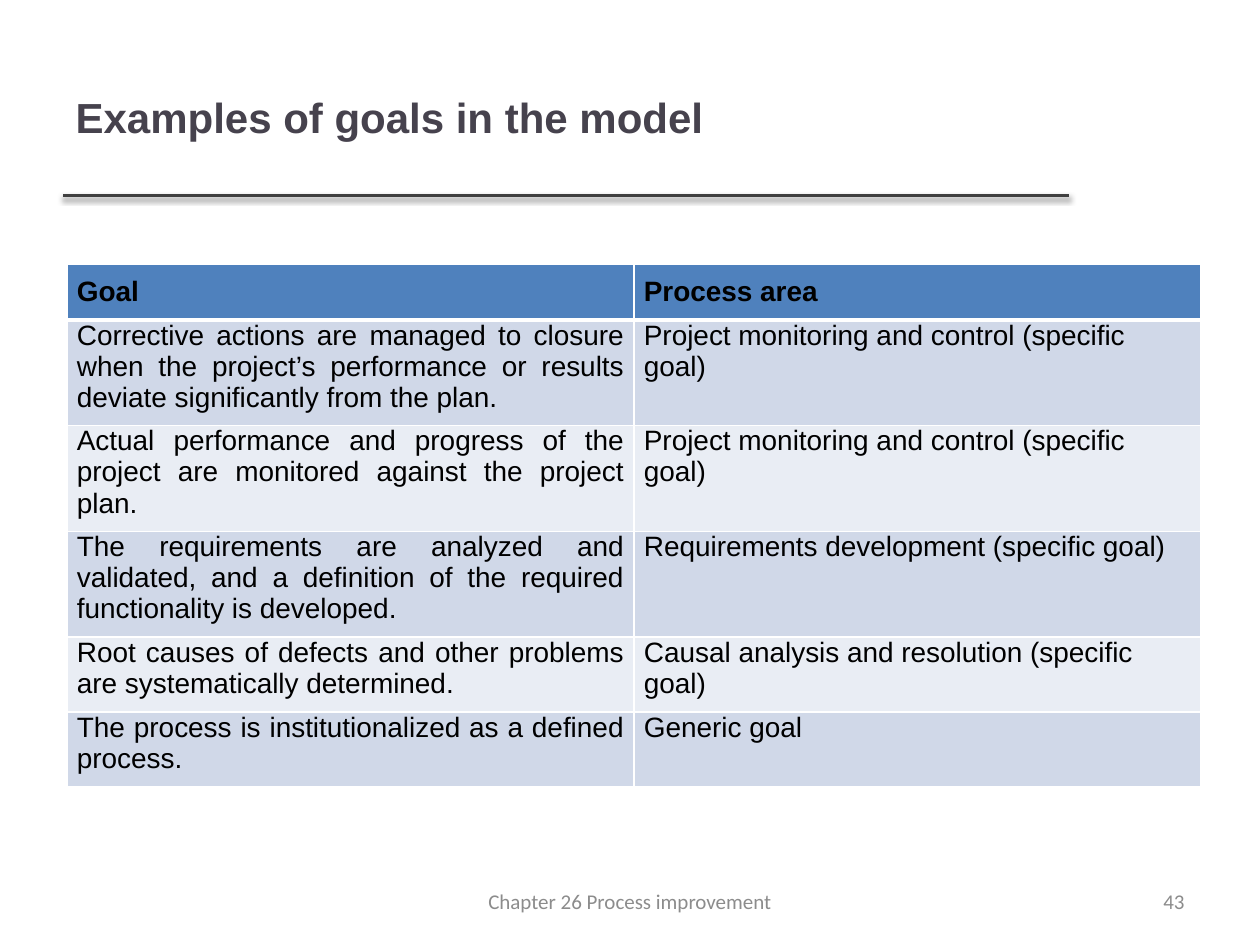
from dataclasses import dataclass

from lxml.etree import SubElement
from pptx import Presentation
from pptx.dml.color import RGBColor
from pptx.enum.shapes import MSO_CONNECTOR as Connector
from pptx.enum.text import MSO_ANCHOR as Anchor, PP_ALIGN as Align
from pptx.oxml import parse_xml
from pptx.oxml.ns import nsdecls, qn
from pptx.util import Cm, Pt


@dataclass(frozen=True)
class Theme:
    """Colours, fonts and type sizes of the slide."""
    title: str = "46424D"
    rule: str = "404040"
    header: str = "4F81BD"
    bands: tuple = ("D0D8E8", "E9EDF4")
    border: str = "FFFFFF"
    body: str = "000000"
    footer: str = "8C8C8C"
    body_font: str = "Arial"
    footer_font: str = "Calibri"
    title_size: int = 24
    table_size: int = 16
    footer_size: int = 12


THEME = Theme()
HEADINGS = ("Goal", "Process area")
GOALS = (
    ("Corrective actions are managed to closure when the project’s performance "
     "or results deviate significantly from the plan.",
     "Project monitoring and control (specific goal)"),
    ("Actual performance and progress of the project are monitored against "
     "the project plan.",
     "Project monitoring and control (specific goal)"),
    ("The requirements are analyzed and validated, and a definition of the "
     "required functionality is developed.",
     "Requirements development (specific goal)"),
    ("Root causes of defects and other problems are systematically determined.",
     "Causal analysis and resolution (specific goal)"),
    ("The process is institutionalized as a defined process.", "Generic goal"),
)


def write_text(text_frame, text, *, size, color, font=THEME.body_font,
               bold=False, align=Align.LEFT):
    """Write one formatted paragraph into a text frame."""
    text_frame.word_wrap = True
    paragraph = text_frame.paragraphs[0]
    paragraph.alignment = align
    run = paragraph.add_run()
    run.text = text
    run.font.name = font
    run.font.size = Pt(size)
    run.font.bold = bold
    run.font.color.rgb = RGBColor.from_string(color)


def add_heading(slide, left, top, width, height):
    """Place the title with the shadowed rule along its lower edge."""
    title = slide.shapes.title
    title.left, title.top, title.width, title.height = left, top, width, height
    title.text_frame.vertical_anchor = Anchor.MIDDLE
    write_text(title.text_frame, "Examples of goals in the model",
               size=THEME.title_size, color=THEME.title, bold=True)

    bottom = top + height
    rule = slide.shapes.add_connector(Connector.STRAIGHT, left, bottom,
                                      left + width, bottom)
    rule.line.width = Pt(2)
    rule.line.color.rgb = RGBColor.from_string(THEME.rule)
    rule._element.spPr.append(parse_xml(
        f'<a:effectLst {nsdecls("a")}>'
        f'<a:outerShdw blurRad="{Pt(3.1)}" dist="{Pt(1.6)}" dir="5400000" rotWithShape="0">'
        '<a:srgbClr val="000000"><a:alpha val="38000"/></a:srgbClr>'
        '</a:outerShdw></a:effectLst>'))


def set_borders(cell, bottom_width):
    """Draw the four borders of a cell."""
    properties = cell._tc.get_or_add_tcPr()
    for side, width in (("L", 1), ("R", 1), ("T", 1), ("B", bottom_width)):
        line = SubElement(properties, qn(f"a:ln{side}"), w=str(Pt(width)))
        fill = SubElement(line, qn("a:solidFill"))
        SubElement(fill, qn("a:srgbClr"), val=THEME.border)


def format_cell(cell, text, *, fill, align, header):
    """Fill one table cell with text, colour, margins and borders."""
    set_borders(cell, 3 if header else 1)
    cell.fill.solid()
    cell.fill.fore_color.rgb = RGBColor.from_string(fill)
    cell.margin_left = cell.margin_right = Cm(0.2)
    cell.margin_top = Cm(0.25 if header else 0)
    cell.margin_bottom = Cm(0.25)
    write_text(cell.text_frame, text, size=THEME.table_size,
               color=THEME.body, bold=header, align=align)


def add_goal_table(slide, left, top, width, height):
    """Place the table of goals and process areas."""
    rows = (HEADINGS, *GOALS)
    table = slide.shapes.add_table(len(rows), len(HEADINGS), left, top,
                                   width, height).table
    for row_index, texts in enumerate(rows):
        header = row_index == 0
        fill = THEME.header if header else THEME.bands[(row_index - 1) % 2]
        for column_index, text in enumerate(texts):
            justified = header or column_index == 0
            format_cell(table.cell(row_index, column_index), text, fill=fill,
                        align=Align.JUSTIFY if justified else Align.LEFT,
                        header=header)


def add_footer(slide, left, top, width, height):
    """Place the centred chapter name and the page number at the right."""
    chapter_width, number_width = Cm(8.05), Cm(5.92)
    parts = (
        ("Chapter 26 Process improvement", (width - chapter_width) // 2,
         chapter_width, Align.CENTER),
        ("43", width - number_width, number_width, Align.RIGHT),
    )
    for text, offset, part_width, align in parts:
        box = slide.shapes.add_textbox(left + offset, top, part_width, height)
        box.text_frame.vertical_anchor = Anchor.MIDDLE
        write_text(box.text_frame, text, size=THEME.footer_size,
                   color=THEME.footer, font=THEME.footer_font, align=align)


def main():
    """Build the slide and save the presentation."""
    presentation = Presentation()
    presentation.slide_width, presentation.slide_height = Cm(25.4), Cm(19.05)
    slide = presentation.slides.add_slide(presentation.slide_layouts[5])
    add_heading(slide, Cm(1.27), Cm(0.76), Cm(20.28), Cm(3.18))
    add_goal_table(slide, Cm(1.35), Cm(5.32), Cm(22.86), Cm(6.24))
    add_footer(slide, Cm(1.27), Cm(17.65), Cm(22.86), Cm(1.02))
    presentation.save("out.pptx")


if __name__ == "__main__":
    main()
